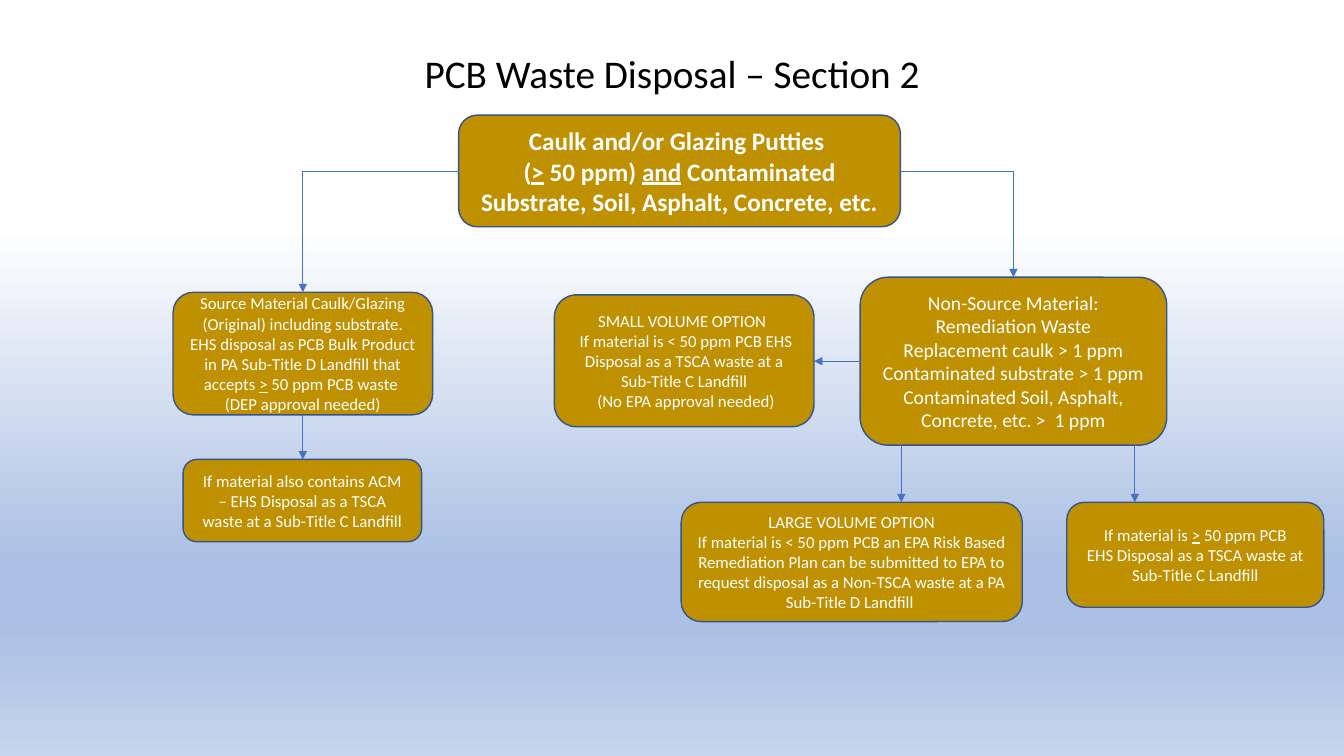
import collections
import pptx
import pptx.dml.color
import pptx.enum.shapes
import pptx.enum.text
import pptx.oxml
import pptx.oxml.ns
import pptx.util

Box = collections.namedtuple("Box", "left top width height")
COLUMNS, ROWS = 160, 90
UNIT = pptx.util.Inches(7.5) / ROWS
GOLD, NAVY, BLUE = "BF9000", "325491", "4472C4"
BACKGROUND_STOPS = [(30, "FFFFFF"), (74, "ABC0E4"), (83, "ABC0E4"), (100, "C7D5ED")]


def color(value):
    """Turn a hex string into a colour."""
    return pptx.dml.color.RGBColor.from_string(value)


def grid(*cells):
    """Turn grid columns and rows into slide lengths."""
    return [round(cell * UNIT) for cell in cells]


def inside(region, left, top, width, height):
    """Return a box placed relative to its region."""
    return Box(region.left + left, region.top + top, width, height)


def write_text(shape, text, size=12, bold=False, fill="FFFFFF"):
    """Write centred lines, with underscores around underlined words."""
    frame = shape.text_frame
    frame.word_wrap = True
    for index, line in enumerate(text.split("\n")):
        paragraph = frame.add_paragraph() if index else frame.paragraphs[0]
        paragraph.alignment = pptx.enum.text.PP_ALIGN.CENTER
        for position, part in enumerate(line.split("_")):
            run = paragraph.add_run()
            run.text = part
            run.font.name = "Calibri"
            run.font.size = pptx.util.Pt(size)
            run.font.bold = bold
            run.font.underline = position % 2 == 1
            run.font.color.rgb = color(fill)


def add_card(slide, box, text, **text_format):
    """Draw a gold rounded card and return its box."""
    kind = pptx.enum.shapes.MSO_SHAPE.ROUNDED_RECTANGLE
    shape = slide.shapes.add_shape(kind, *grid(*box))
    shape.shadow.inherit = False
    shape.fill.solid()
    shape.fill.fore_color.rgb = color(GOLD)
    shape.line.color.rgb = color(NAVY)
    shape.line.width = pptx.util.Pt(1)
    shape.text_frame.vertical_anchor = pptx.enum.text.MSO_ANCHOR.MIDDLE
    write_text(shape, text, **text_format)
    return box


def add_route(slide, *points):
    """Draw straight lines through the points, with an arrowhead at the last."""
    for start, end in zip(points, points[1:]):
        kind = pptx.enum.shapes.MSO_CONNECTOR.STRAIGHT
        connector = slide.shapes.add_connector(kind, *grid(*start, *end))
        connector.line.color.rgb = color(BLUE)
        connector.line.width = pptx.util.Pt(0.5)
        properties = connector._element.spPr
        pptx.oxml.ns.qn("a:effectLst")
        properties.append(properties.makeelement(pptx.oxml.ns.qn("a:effectLst")))
    line = connector.line._get_or_add_ln()
    line.append(line.makeelement(pptx.oxml.ns.qn("a:tailEnd"), {"type": "triangle"}))


def paint_background(slide):
    """Fill the background with a vertical gradient."""
    fill = slide.background.fill
    fill.gradient()
    fill.gradient_angle = 270
    stops = slide._element.find(".//" + pptx.oxml.ns.qn("a:gsLst"))
    for stop in list(stops):
        stops.remove(stop)
    for percent, value in BACKGROUND_STOPS:
        stop = stops.makeelement(pptx.oxml.ns.qn("a:gs"), {"pos": str(percent * 1000)})
        stop.append(stop.makeelement(pptx.oxml.ns.qn("a:srgbClr"), {"val": value}))
        stops.append(stop)


def add_header(slide, region):
    """Place the title and the starting card, and return the card's box."""
    title = slide.shapes.add_textbox(*grid(*inside(region, 0, 0, 80, 6.8)))
    write_text(title, "PCB Waste Disposal – Section 2", size=28, fill="000000")
    return add_card(
        slide, inside(region, 14.6, 8.4, 52.6, 13.3),
        "Caulk and/or Glazing Putties \n"
        "(_>_ 50 ppm) _and_ Contaminated Substrate, Soil, Asphalt, Concrete, etc.",
        size=18, bold=True)


def add_source_branch(slide, region):
    """Place the source material cards, and return the upper one's box."""
    source = add_card(
        slide, inside(region, 0, 0, 30.9, 14.6),
        "Source Material Caulk/Glazing (Original) including substrate. "
        "EHS disposal as PCB Bulk Product in PA Sub-Title D Landfill that accepts "
        "_>_ 50 ppm PCB waste \n(DEP approval needed)")
    asbestos = add_card(
        slide, inside(region, 1.2, 19.9, 28.4, 9.8),
        "If material also contains ACM – EHS Disposal as a TSCA waste "
        "at a Sub-Title C Landfill")
    middle = source.left + source.width / 2
    add_route(slide, (middle, source.top + source.height), (middle, asbestos.top))
    return source


def add_remediation_branch(slide, region):
    """Place the non-source cards, and return the main one's box."""
    remediation = add_card(
        slide, inside(region, 36.4, 0, 36.5, 20),
        "Non-Source Material: Remediation Waste\nReplacement caulk > 1 ppm\n"
        "Contaminated substrate > 1 ppm\n"
        "Contaminated Soil, Asphalt, Concrete, etc. >  1 ppm", size=14)
    large = add_card(
        slide, inside(region, 15.1, 26.8, 40.6, 14.2),
        "LARGE VOLUME OPTION\nIf material is < 50 ppm PCB an EPA Risk Based "
        "Remediation Plan can be submitted to EPA to request disposal as a "
        "Non-TSCA waste at a PA Sub-Title D Landfill ")
    add_card(
        slide, inside(region, 61, 26.8, 30.6, 12.5),
        " If material is _>_ 50 ppm PCB \n"
        "EHS Disposal as a TSCA waste at Sub-Title C Landfill")
    small = add_card(
        slide, inside(region, 0, 2.1, 30.9, 15.7),
        "SMALL VOLUME OPTION \n If material is < 50 ppm PCB EHS Disposal as a "
        "TSCA waste at a Sub-Title C Landfill\n (No EPA approval needed)")
    middle = remediation.top + remediation.height / 2
    add_route(slide, (remediation.left, middle), (small.left + small.width, middle))
    for column in (41.3, 69.1):
        add_route(slide, (region.left + column, remediation.top + remediation.height),
                  (region.left + column, large.top))
    return remediation


def main():
    """Build and save the slide."""
    presentation = pptx.Presentation()
    presentation.slide_width, presentation.slide_height = grid(COLUMNS, ROWS)
    slide = presentation.slides.add_slide(presentation.slide_layouts[6])
    paint_background(slide)
    start = add_header(slide, Box(40, 5.3, 80, 21.7))
    source = add_source_branch(slide, Box(20.6, 34.8, 30.9, 29.7))
    remediation = add_remediation_branch(slide, Box(66, 33, 91.6, 41))
    middle = start.top + start.height / 2
    for edge, target in ((start.left, source), (start.left + start.width, remediation)):
        column = target.left + target.width / 2
        add_route(slide, (edge, middle), (column, middle), (column, target.top))
    presentation.save("out.pptx")


if __name__ == "__main__":
    main()
